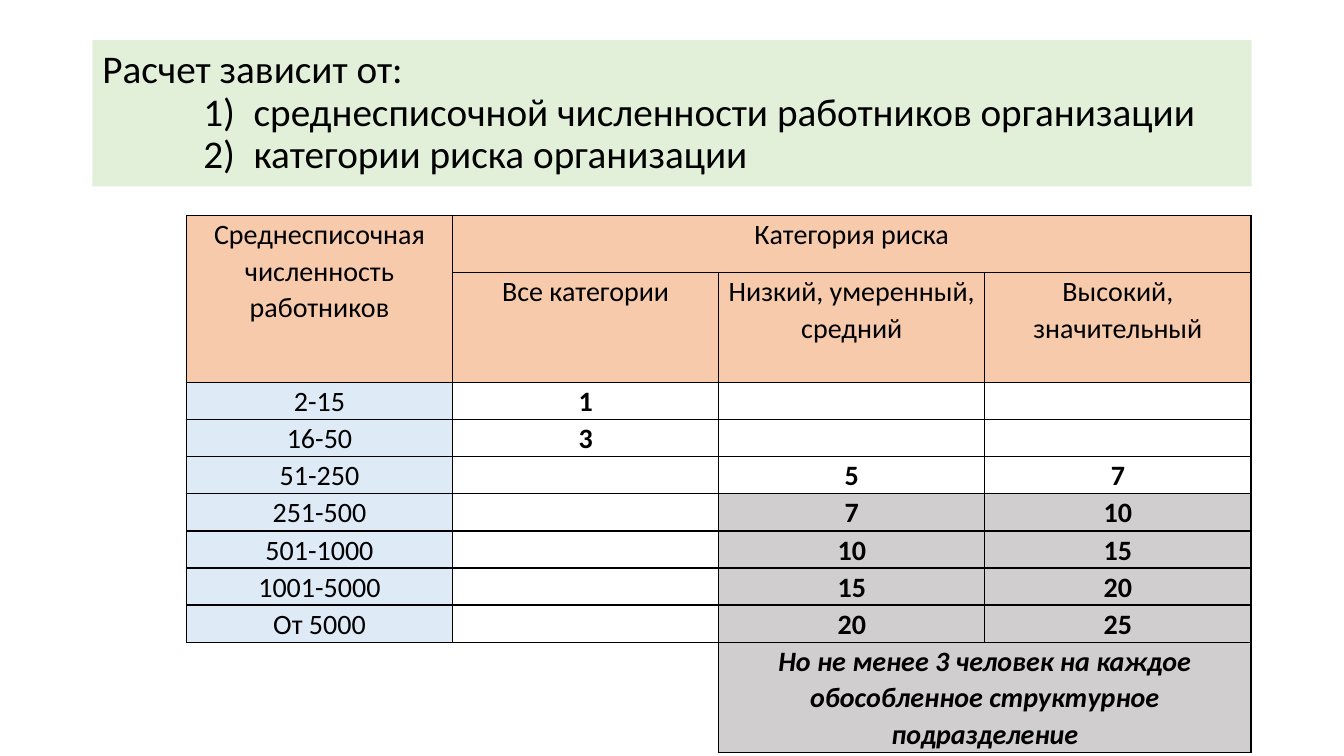
import pptx
import pptx.util
import pptx.enum.text
import pptx.dml.color
import pptx.oxml
from lxml import etree

Pt = pptx.util.Pt
ALIGN = pptx.enum.text.PP_ALIGN
COLORS = {"text": "000000", "title": "E2F0D9", "header": "F7CAAC",
          "staff": "DEEAF6", "limit": "D0CECE"}


class RiskSlide:
    """Holds the text style and the slide, and adds the title and table."""

    font = "Calibri"
    title_size = 28
    table_size = 20

    def __init__(self, deck):
        self.slide = deck.slides.add_slide(deck.slide_layouts[5])

    def color(self, name):
        return pptx.dml.color.RGBColor.from_string(COLORS[name])

    def run(self, paragraph, text, size, bold=False, italic=False):
        run = paragraph.add_run()
        run.text = text
        font = run.font
        font.name, font.size = self.font, Pt(size)
        font.bold, font.italic = bold, italic
        font.color.rgb = self.color("text")

    def title(self, heading, factors, left, top, width, height):
        title = self.slide.shapes.title
        title.left, title.top = Pt(left), Pt(top)
        title.width, title.height = Pt(width), Pt(height)
        title.fill.solid()
        title.fill.fore_color.rgb = self.color("title")
        frame = title.text_frame
        frame.word_wrap = True
        frame.auto_size = pptx.enum.text.MSO_AUTO_SIZE.NONE
        frame.vertical_anchor = pptx.enum.text.MSO_ANCHOR.MIDDLE
        for index, line in enumerate([heading] + factors):
            paragraph = frame.add_paragraph() if index else frame.paragraphs[0]
            paragraph.alignment = ALIGN.LEFT
            paragraph.line_spacing = 0.9
            paragraph.space_before = Pt(0)
            if index:
                properties = paragraph._p.get_or_add_pPr()
                properties.set("marL", str(Pt(108)))
                properties.set("indent", str(-Pt(36)))
                numbering = etree.SubElement(properties, pptx.oxml.ns.qn("a:buAutoNum"))
                numbering.set("type", "arabicParenR")
            self.run(paragraph, line, self.title_size)

    def table(self, left, top, width, row_heights, columns):
        frame = self.slide.shapes.add_table(
            len(row_heights), columns, Pt(left), Pt(top), Pt(width), Pt(sum(row_heights)))
        table = frame.table
        table.first_row = table.horz_banding = False
        for column in table.columns:
            column.width = Pt(width / columns)
        for row, height in zip(table.rows, row_heights):
            row.height = Pt(height)
        return table

    def cell(self, cell, lines, fill, sides="LRTB", bold=False, italic=False):
        cell.margin_left = cell.margin_right = Pt(5)
        cell.margin_top = cell.margin_bottom = Pt(0)
        properties = cell._tc.get_or_add_tcPr()
        for side in "LRTB":
            border = etree.SubElement(properties, pptx.oxml.ns.qn("a:ln" + side))
            if side in sides:
                border.set("w", str(Pt(1)))
                solid = etree.SubElement(border, pptx.oxml.ns.qn("a:solidFill"))
                color = etree.SubElement(solid, pptx.oxml.ns.qn("a:srgbClr"))
                color.set("val", COLORS["text"])
            else:
                etree.SubElement(border, pptx.oxml.ns.qn("a:noFill"))
        if fill:
            cell.fill.solid()
            cell.fill.fore_color.rgb = self.color(fill)
        else:
            cell.fill.background()
        for index, line in enumerate(lines):
            frame = cell.text_frame
            paragraph = frame.add_paragraph() if index else frame.paragraphs[0]
            paragraph.alignment = ALIGN.CENTER
            paragraph.line_spacing = 1.07
            self.run(paragraph, line, self.table_size, bold, italic)


def main():
    deck = pptx.Presentation()
    deck.slide_width, deck.slide_height = Pt(960), Pt(540)
    risk = RiskSlide(deck)
    risk.title("Расчет зависит от:",
               ["среднесписочной численности работников организации",
                "категории риска организации"], 66, 28.75, 828, 104.4)

    headers = [
        ["Среднесписочная численность работников", "Категория риска", "", ""],
        ["", "Все категории", "Низкий, умеренный, средний", "Высокий, значительный"],
    ]
    norms = [
        ["2-15", "1", "", ""],
        ["16-50", "3", "", ""],
        ["51-250", "", "5", "7"],
        ["251-500", "", "7", "10"],
        ["501-1000", "", "10", "15"],
        ["1001-5000", "", "15", "20"],
        ["От 5000", "", "20", "25"],
    ]
    minimum = ["Но не менее 3 человек на каждое",
               "обособленное структурное подразделение"]
    table = risk.table(133.2, 153.75, 760.4, [41, 52.5] + [26.5] * len(norms) + [71.5], 4)
    first_norm, last = len(headers), len(headers) + len(norms)
    table.cell(0, 0).merge(table.cell(1, 0))
    table.cell(0, 1).merge(table.cell(0, 3))
    table.cell(last, 2).merge(table.cell(last, 3))

    for row, texts in enumerate(headers + norms):
        for column, text in enumerate(texts):
            if row < first_norm:
                fill = "header"
            elif column == 0:
                fill = "staff"
            else:
                fill = "limit" if column > 1 and row > 4 else None
            risk.cell(table.cell(row, column), [text] if text else [], fill,
                      bold=row >= first_norm and column > 0)
    risk.cell(table.cell(last, 0), [], None, "T")
    risk.cell(table.cell(last, 1), [], None, "TR")
    risk.cell(table.cell(last, 2), minimum, "limit", bold=True, italic=True)
    risk.cell(table.cell(last, 3), [], "limit")
    deck.save("out.pptx")


if __name__ == "__main__":
    main()
